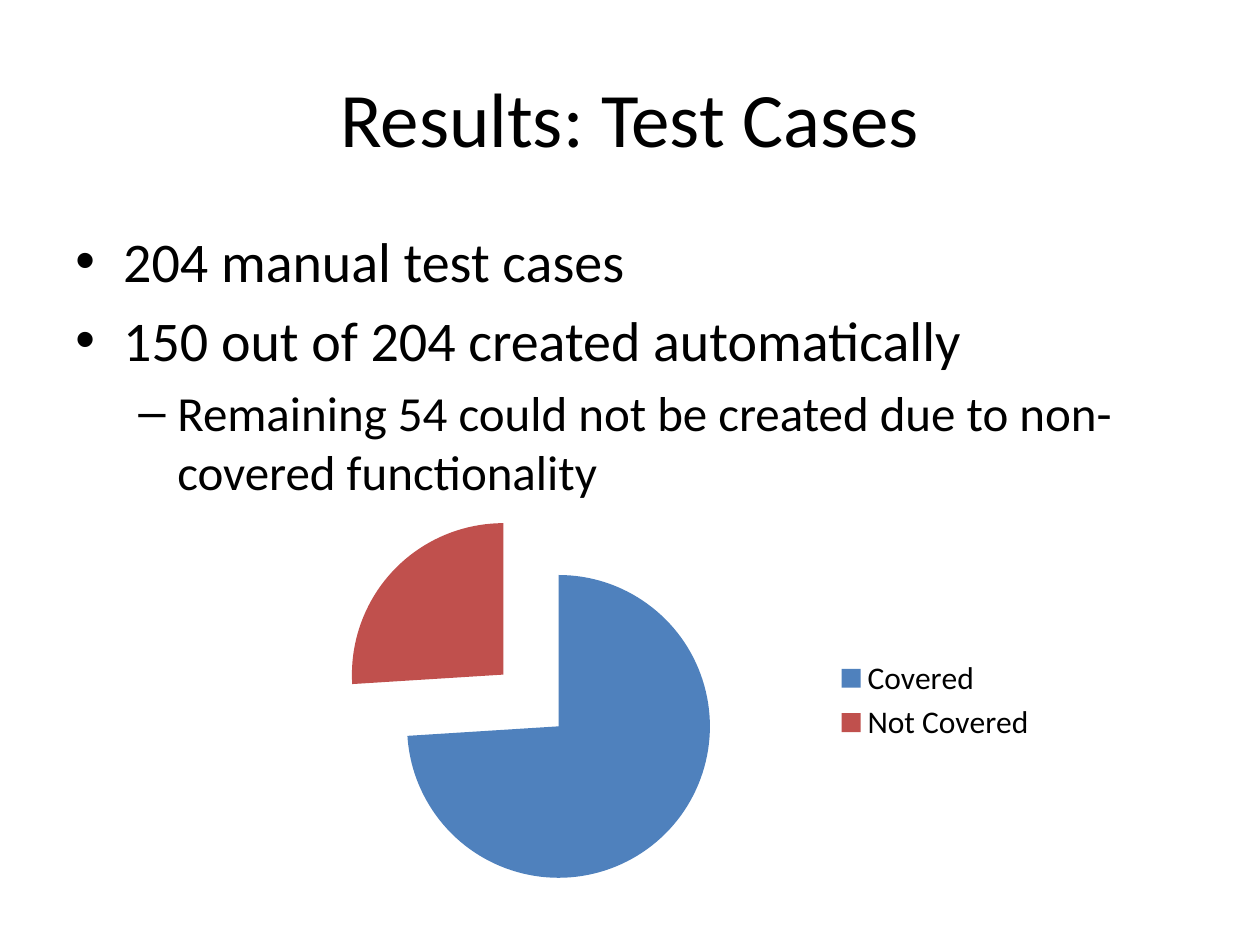
from pptx import Presentation
from pptx import util as u
from pptx.chart.data import CategoryChartData
from pptx.dml.color import RGBColor
from pptx.enum import chart as charts, text
from pptx.oxml.ns import qn
from lxml import etree

# Content
FONT = "Calibri"
TITLE = "Results: Test Cases"
BULLETS = [  # level, text
    (0, "204 manual test cases"),
    (0, "150 out of 204 created automatically"),
    (1, "Remaining 54 could not be created due to non-covered functionality"),
]
LEVELS = [  # bullet, size, left margin, hanging indent
    ("•", 32, 0.38, 0.38),
    ("–", 28, 0.81, 0.31),
]
COVERAGE = [("Covered", 74, "4F81BD"), ("Not Covered", 26, "C0504D")]
EXPLOSION = 25

# Layout
WIDTH, HEIGHT = 10, 7.5
MARGIN = WIDTH * 0.05
TITLE_BOX = (MARGIN, 0.3, WIDTH - 2 * MARGIN, 1.25)
BODY_BOX = (MARGIN, 1.75, WIDTH - 2 * MARGIN, 4.95)
CHART_BOX = (1.83, 3.92, WIDTH * 0.65, 3.28)


def inches(box):
    return [u.Inches(length) for length in box]


def color(hex_code):
    return RGBColor.from_string(hex_code)


def style(font, size):
    font.name, font.size = FONT, u.Pt(size)
    font.color.rgb = color("000000")


def add_frame(slide, box, anchor):
    frame = slide.shapes.add_textbox(*inches(box)).text_frame
    frame.word_wrap = True
    frame.vertical_anchor = anchor
    return frame


def write(paragraph, words, size, align=text.PP_ALIGN.LEFT, before=0):
    paragraph.alignment = align
    paragraph.space_before = u.Pt(before)
    run = paragraph.add_run()
    run.text = words
    style(run.font, size)


def add_bullet(paragraph, mark, margin, hanging):
    properties = paragraph._p.get_or_add_pPr()
    properties.set("marL", str(u.Inches(margin)))
    properties.set("indent", str(-u.Inches(hanging)))
    etree.SubElement(properties, qn("a:buFont"), typeface="Arial")
    etree.SubElement(properties, qn("a:buChar"), char=mark)


def add_pie(slide):
    data = CategoryChartData()
    data.categories = [name for name, _, _ in COVERAGE]
    data.add_series("Series 1", [value for _, value, _ in COVERAGE])
    chart = slide.shapes.add_chart(
        charts.XL_CHART_TYPE.PIE, *inches(CHART_BOX), data).chart
    style(chart.font, 18)
    chart.has_title = False
    chart.has_legend = True
    chart.legend.position = charts.XL_LEGEND_POSITION.RIGHT
    chart.legend.include_in_layout = False

    series = chart.plots[0].series[0]
    for index, (_, _, fill) in enumerate(COVERAGE):
        slice_fill = series.points[index].format.fill
        slice_fill.solid()
        slice_fill.fore_color.rgb = color(fill)

    # Pull the slices apart
    explosion = etree.Element(qn("c:explosion"), val=str(EXPLOSION))
    series._element.find(qn("c:dPt")).addprevious(explosion)


def main():
    presentation = Presentation()
    presentation.slide_width = u.Inches(WIDTH)
    presentation.slide_height = u.Inches(HEIGHT)
    slide = presentation.slides.add_slide(presentation.slide_layouts[6])

    # Title
    title = add_frame(slide, TITLE_BOX, text.MSO_ANCHOR.MIDDLE)
    write(title.paragraphs[0], TITLE, 44, align=text.PP_ALIGN.CENTER)

    # Bullets
    body = add_frame(slide, BODY_BOX, text.MSO_ANCHOR.TOP)
    for index, (level, words) in enumerate(BULLETS):
        paragraph = body.add_paragraph() if index else body.paragraphs[0]
        mark, size, margin, hanging = LEVELS[level]
        paragraph.level = level
        write(paragraph, words, size, before=size * 0.2)
        add_bullet(paragraph, mark, margin, hanging)

    # Coverage chart
    add_pie(slide)
    presentation.save("out.pptx")


if __name__ == "__main__":
    main()
